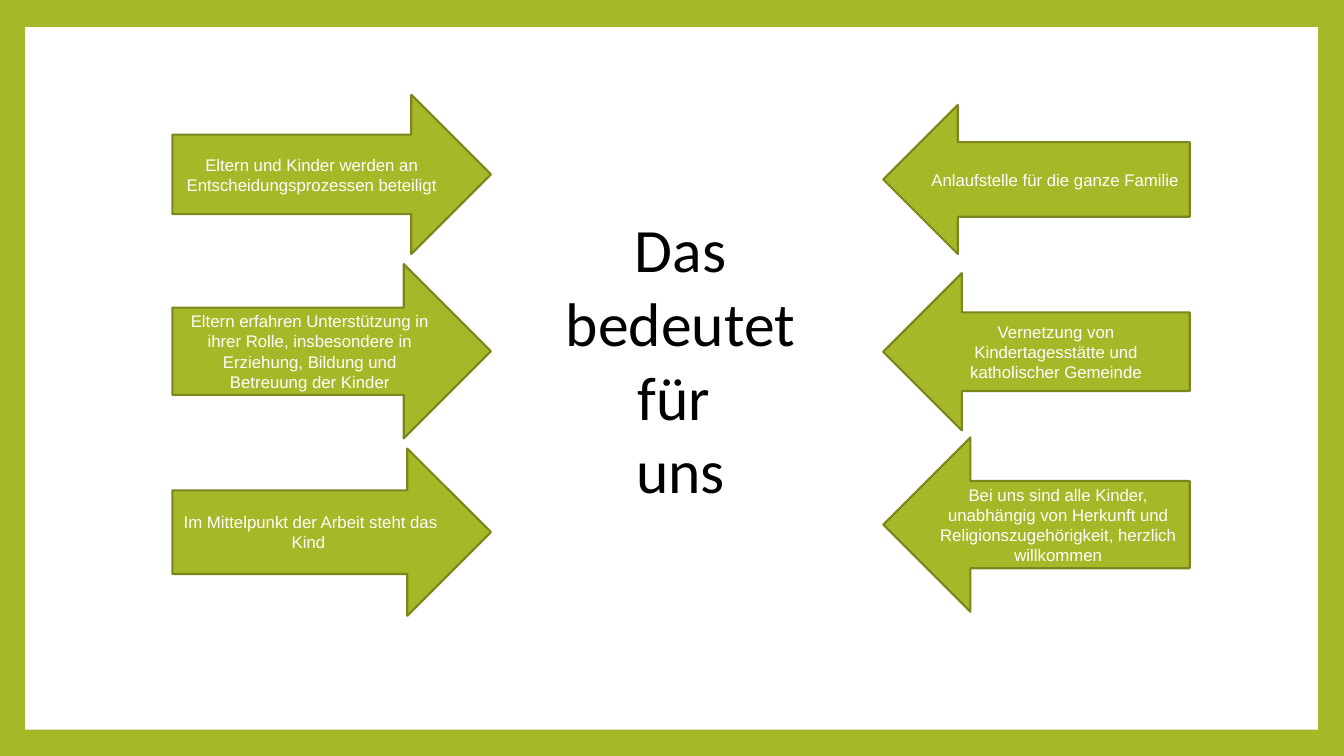
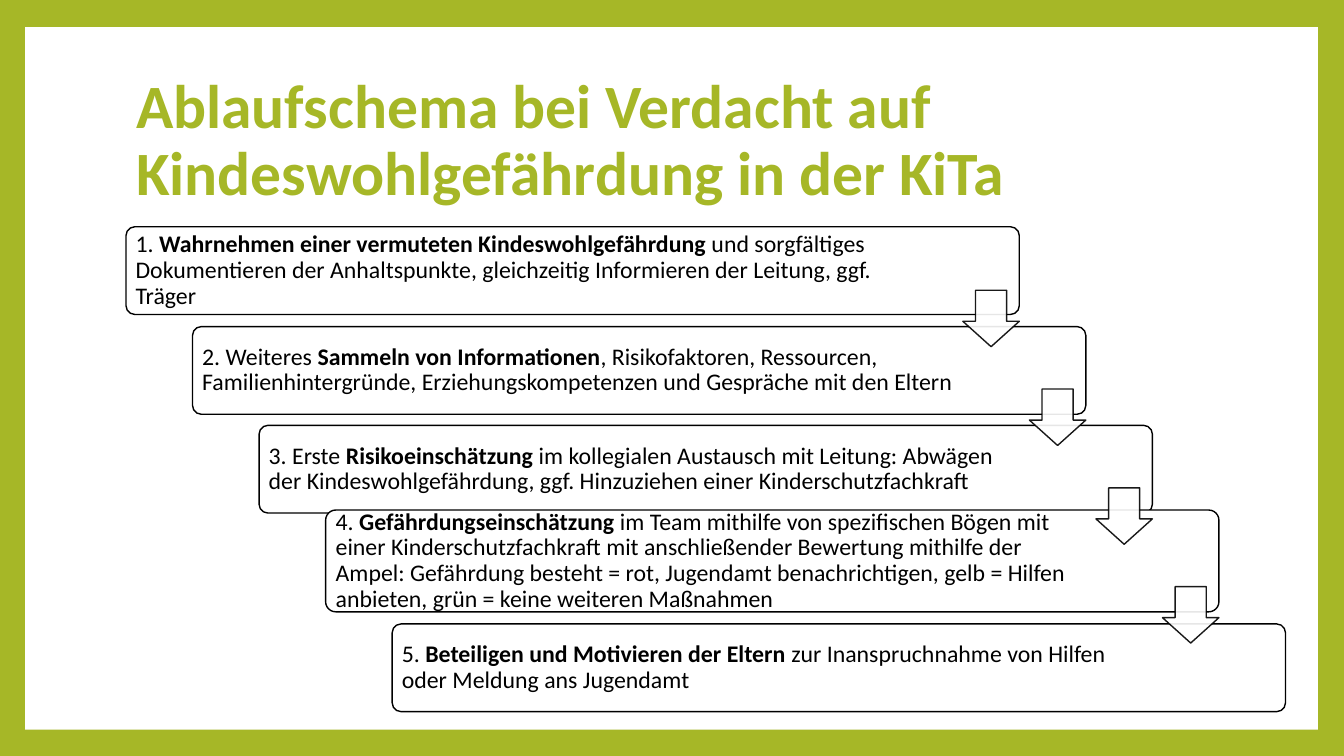
"""Build two slides: what the approach means for us, and the child protection procedure."""
from dataclasses import dataclass

from lxml import etree
from pptx import Presentation
from pptx.dml.color import RGBColor
from pptx.enum import shapes, text
from pptx.oxml.ns import qn
from pptx.util import Inches, Pt


@dataclass(frozen=True)
class Theme:
    green: RGBColor = RGBColor(0xA6, 0xB7, 0x27)
    dark_green: RGBColor = RGBColor(0x7B, 0x87, 0x1D)
    white: RGBColor = RGBColor(0xFF, 0xFF, 0xFF)
    black: RGBColor = RGBColor(0, 0, 0)
    heading_font: str = "Calibri"
    arrow_font: str = "Arial"
    title_size: Pt = Pt(44)
    step_size: Pt = Pt(17)
    arrow_size: Pt = Pt(12)


theme = Theme()


def add_box(slide, preset, box, fill, line=None, line_width=1):
    shape = slide.shapes.add_shape(preset, *map(Inches, box))
    shape.shadow.inherit = False
    shape.fill.solid()
    shape.fill.fore_color.rgb = fill
    if line is None:
        shape.line.fill.background()
    else:
        shape.line.color.rgb = line
        shape.line.width = Pt(line_width)
    return shape


def style_paragraph(paragraph, name, size, color, alignment, bold=False):
    paragraph.alignment = alignment
    paragraph.font.name = name
    paragraph.font.size = size
    paragraph.font.color.rgb = color
    paragraph.font.bold = bold


presentation = Presentation()
presentation.slide_width = Inches(13.33)
presentation.slide_height = Inches(7.5)
master = presentation.slide_master
master.background.fill.solid()
master.background.fill.fore_color.rgb = theme.green

title_layout = presentation.slide_layouts.get_by_name("Title Only")
meaning_slide = presentation.slides.add_slide(title_layout)
procedure_slide = presentation.slides.add_slide(title_layout)

panel = add_box(meaning_slide, shapes.MSO_SHAPE.RECTANGLE, (0.25, 0.27, 12.82, 6.97), theme.white)
master.shapes[0]._element.addprevious(panel._element)

titles = [
    (meaning_slide, "Das\nbedeutet\nfür \nuns", (5.49, 2.04, 2.52, 3.06),
     text.MSO_ANCHOR.TOP, text.PP_ALIGN.CENTER, theme.black, False, 1.0),
    (procedure_slide, "Ablaufschema bei Verdacht auf Kindeswohlgefährdung in der KiTa",
     (1.25, 0.67, 10.8, 1.48), text.MSO_ANCHOR.MIDDLE, text.PP_ALIGN.LEFT, theme.green, True, 0.9),
]
for slide, wording, box, anchor, alignment, color, bold, spacing in titles:
    title = slide.shapes.title
    title.left, title.top, title.width, title.height = map(Inches, box)
    frame = title.text_frame
    frame.text = wording
    frame.word_wrap = True
    frame.auto_size = text.MSO_AUTO_SIZE.NONE
    frame.vertical_anchor = anchor
    for paragraph in frame.paragraphs:
        paragraph.line_spacing = spacing
        style_paragraph(paragraph, theme.heading_font, theme.title_size, color, alignment, bold)

arrow_columns = [
    (shapes.MSO_SHAPE.RIGHT_ARROW, 1.71, 3.16, [
        (0.94, 1.58, "Eltern und Kinder werden an Entscheidungsprozessen beteiligt"),
        (2.62, 1.73, "Eltern erfahren Unterstützung in ihrer Rolle, insbesondere in "
                     "Erziehung, Bildung und Betreuung der Kinder"),
        (4.45, 1.66, "Im Mittelpunkt der Arbeit steht das Kind "),
    ]),
    (shapes.MSO_SHAPE.LEFT_ARROW, 8.76, 3.04, [
        (1.04, 1.48, "Anlaufstelle für die ganze Familie"),
        (2.71, 1.56, "Vernetzung von Kindertagesstätte und katholischer Gemeinde"),
        (4.34, 1.73, "Bei uns sind alle Kinder, unabhängig von Herkunft und "
                     "Religionszugehörigkeit, herzlich willkommen"),
    ]),
]
for preset, left, width, arrows in arrow_columns:
    for top, height, wording in arrows:
        arrow = add_box(meaning_slide, preset, (left, top, width, height),
                        theme.green, theme.dark_green, 1.5)
        arrow.text_frame.text = wording
        arrow.text_frame.word_wrap = True
        arrow.text_frame.vertical_anchor = text.MSO_ANCHOR.MIDDLE
        style_paragraph(arrow.text_frame.paragraphs[0], theme.arrow_font, theme.arrow_size,
                        theme.white, text.PP_ALIGN.CENTER)

steps = [
    (2.25, 0.87, 1.04, "1. ", "Wahrnehmen einer vermuteten Kindeswohlgefährdung ",
     "und sorgfältiges Dokumentieren der Anhaltspunkte, gleichzeitig Informieren der Leitung, "
     "ggf. Träger"),
    (3.24, 0.87, 1.28, "2. Weiteres ", "Sammeln von Informationen",
     ", Risikofaktoren, Ressourcen, Familienhintergründe, Erziehungskompetenzen und Gespräche "
     "mit den Eltern"),
    (4.22, 0.87, 1.28, "3. Erste", " Risikoeinschätzung ",
     "im kollegialen Austausch mit Leitung: Abwägen der Kindeswohlgefährdung, ggf. Hinzuziehen "
     "einer Kinderschutzfachkraft"),
    (5.06, 1.01, 1.28, "4. ", "Gefährdungseinschätzung",
     " im Team mithilfe von spezifischen Bögen mit einer Kinderschutzfachkraft mit "
     "anschließender Bewertung mithilfe der Ampel: Gefährdung besteht = rot, Jugendamt "
     "benachrichtigen, gelb = Hilfen anbieten, grün = keine weiteren Maßnahmen"),
    (6.19, 0.87, 1.28, "5. ", "Beteiligen und Motivieren der Eltern ",
     "zur Inanspruchnahme von Hilfen oder Meldung ans Jugendamt"),
]
step_left, step_width, step_shift = 1.25, 8.86, 0.66
for index, (top, height, right_margin, *parts) in enumerate(steps):
    step = add_box(procedure_slide, shapes.MSO_SHAPE.ROUNDED_RECTANGLE,
                   (step_left + index * step_shift, top, step_width, height),
                   theme.white, theme.black)
    step.adjustments[0] = 0.1
    frame = step.text_frame
    frame.word_wrap = True
    frame.vertical_anchor = text.MSO_ANCHOR.MIDDLE
    frame.margin_left = frame.margin_top = frame.margin_bottom = Inches(0.07)
    frame.margin_right = Inches(right_margin)
    paragraph = frame.paragraphs[0]
    paragraph.line_spacing = 0.9
    paragraph.space_after = Pt(7)
    style_paragraph(paragraph, theme.heading_font, theme.step_size, theme.black,
                    text.PP_ALIGN.LEFT)
    for part, bold in zip(parts, (False, True, False)):
        run = paragraph.add_run()
        run.text = part
        run.font.bold = bold

link_size, link_top, link_pitch = 0.56, 2.88, 0.98
for index in range(len(steps) - 1):
    link_left = step_left + step_width - link_size + index * step_shift
    link = add_box(procedure_slide, shapes.MSO_SHAPE.DOWN_ARROW,
                   (link_left, link_top + index * link_pitch, link_size, link_size),
                   theme.white, theme.black)
    link.adjustments[0] = 0.55
    link.adjustments[1] = 0.45
    for color in link._element.spPr.iter(qn("a:srgbClr")):
        etree.SubElement(color, qn("a:alpha"), val="90000")

presentation.save("out.pptx")
